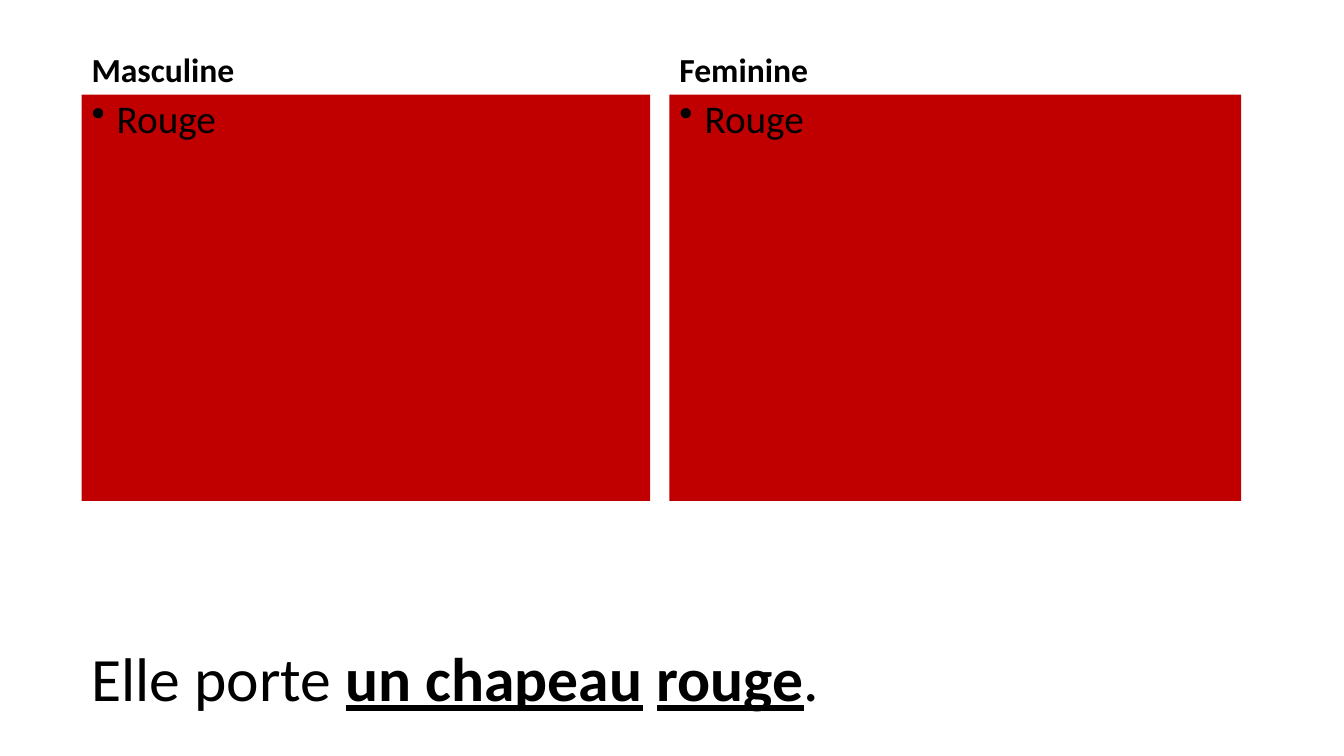
import pptx
import pptx.dml.color
import pptx.enum.shapes
import pptx.enum.text
import pptx.util
from lxml import etree
from pptx.util import Inches, Pt

COLORS = {"text": "000000", "rouge": "C00000"}
ANCHOR = pptx.enum.text.MSO_ANCHOR


class ColorSlide:
    """A vocabulary slide with its style and its kinds of element."""

    font_name = "Calibri"

    def __init__(self, presentation):
        self.slide = presentation.slides.add_slide(presentation.slide_layouts[6])

    def color(self, key):
        return pptx.dml.color.RGBColor.from_string(COLORS[key])

    def style(self, frame, anchor, size, bold=False, space_before=0):
        """Set up the frame and return its first paragraph, ready for runs."""
        frame.word_wrap = True
        frame.vertical_anchor = anchor
        paragraph = frame.paragraphs[0]
        paragraph.alignment = pptx.enum.text.PP_ALIGN.LEFT
        paragraph.line_spacing = 0.9
        paragraph.space_before = Pt(space_before)
        paragraph.font.name = self.font_name
        paragraph.font.size = Pt(size)
        paragraph.font.bold = bold
        paragraph.font.color.rgb = self.color("text")
        return paragraph

    def sentence(self, parts, left, top, width, height):
        """Write (text, stressed) parts; stressed ones are bold and underlined."""
        box = self.slide.shapes.add_textbox(left, top, width, height)
        paragraph = self.style(box.text_frame, ANCHOR.MIDDLE, 44)
        for text, stressed in parts:
            run = paragraph.add_run()
            run.text = text
            if stressed:
                run.font.bold = True
                run.font.underline = True

    def heading(self, text, left, top, width, height):
        box = self.slide.shapes.add_textbox(left, top, width, height)
        paragraph = self.style(box.text_frame, ANCHOR.BOTTOM, 24, True, 10)
        paragraph.add_run().text = text

    def color_panel(self, word, fill, left, top, width, height):
        panel = self.slide.shapes.add_shape(
            pptx.enum.shapes.MSO_SHAPE.RECTANGLE, left, top, width, height)
        panel.shadow.inherit = False
        panel.fill.solid()
        panel.fill.fore_color.rgb = self.color(fill)
        panel.line.fill.background()
        paragraph = self.style(panel.text_frame, ANCHOR.TOP, 28, space_before=10)
        paragraph.add_run().text = word
        self.bullet(paragraph)

    def bullet(self, paragraph):
        properties = paragraph._p.get_or_add_pPr()
        properties.set("marL", str(Inches(0.25)))
        properties.set("indent", str(-Inches(0.25)))
        mark = etree.Element(pptx.oxml.ns.qn("a:buChar"), char="•")
        properties.find(pptx.oxml.ns.qn("a:defRPr")).addprevious(mark)


def main():
    presentation = pptx.Presentation()
    presentation.slide_width = Inches(13.33)
    presentation.slide_height = Inches(7.5)
    page = ColorSlide(presentation)

    page.sentence(
        [("Elle porte ", False), ("un chapeau", True), (" ", False),
         ("rouge", True), (".", False)],
        Inches(0.81), Inches(6.04), Inches(11.5), Inches(1.45))

    genders = [("Masculine", "Rouge", 0.81, 5.64), ("Feminine", "Rouge", 6.64, 5.67)]
    for gender, word, left, width in genders:
        page.heading(gender, Inches(left), Inches(0.04), Inches(width), Inches(0.9))
        page.color_panel(word, "rouge", Inches(left), Inches(0.94),
                         Inches(width), Inches(4.03))

    presentation.save("out.pptx")


if __name__ == "__main__":
    main()
